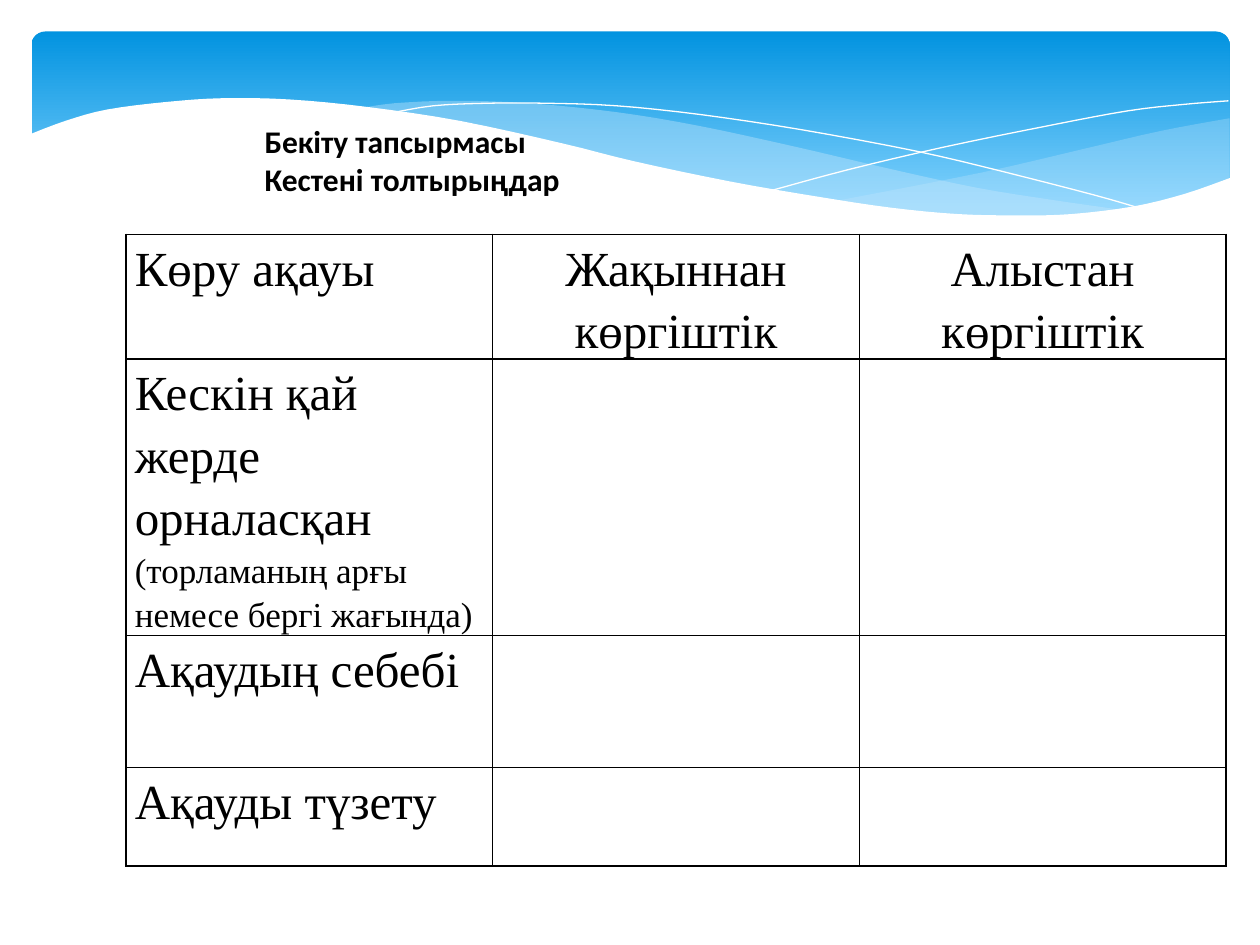
"""Build a task slide with a blue wave banner and a table to fill in about eyesight defects."""
from dataclasses import dataclass
from itertools import chain
from typing import Optional

from lxml.etree import SubElement
from pptx import Presentation
from pptx.dml.color import RGBColor
from pptx.enum.shapes import MSO_SHAPE as Shape
from pptx.enum.text import MSO_ANCHOR as Anchor, MSO_AUTO_SIZE as AutoSize, PP_ALIGN as Align
from pptx.oxml.ns import qn
from pptx.util import Inches, Pt

SLIDE_W, SLIDE_H = Inches(10), Inches(7.5)
GRID_COLUMNS = 100
COLORS = {"ink": "000000", "paper": "FFFFFF", "sky": "0293E0", "pale_sky": "83D3FE", "mist": "C6E7FC"}

Point = tuple[float, float]
Curve = list[Point]


@dataclass
class Wave:
    edges: list[Curve]
    fill: Optional[str] = None
    opacity: int = 100


@dataclass
class Line:
    text: str
    size: int = 28


WAVES = [
    Wave([
        [(97.5, 9.4), (92.1, 10.4), (86.1, 11.8), (77.9, 13.7), (66.1, 16)],
        [(66.1, 16), (71.9, 16.7), (76.9, 17.1), (82.4, 17.2), (87.2, 16.9), (91.3, 16.2),
         (94.9, 15.2), (97.6, 14.1)],
        [(97.6, 14.1), (97.6, 9.4)],
    ], "mist", 29),
    Wave([
        [(89.3, 16.7), (83.7, 15.9), (77.5, 14.9), (70.6, 13.4), (62.9, 11.6), (55.5, 10),
         (48.9, 8.9), (42, 8.2), (36.1, 8), (31.3, 8.2), (28.6, 8.6)],
        [(28.6, 8.6), (34.2, 9.4), (40.4, 10.6), (49.1, 12.6), (56.6, 14.3), (63.4, 15.6),
         (69.5, 16.5), (76.1, 17.1), (81.8, 17.3), (85.7, 17.1), (89.3, 16.7)],
    ], "mist", 40),
    Wave([[(30.9, 9), (34.4, 8.4), (38.7, 8.2), (43.3, 8.2), (48.9, 8.4), (55.6, 9.1), (63.6, 10.3),
           (72.7, 12), (79.5, 13.6), (86.9, 15.5), (90.7, 16.6)]]),
    Wave([[(61.3, 15.1), (67.2, 13.5), (74.8, 11.7), (83.6, 9.9), (89.5, 8.8), (93.8, 8.3), (97.5, 8)]]),
    Wave([
        [(97.7, 14.1), (94, 15.4), (89.9, 16.4), (85, 17), (80.9, 17.1), (76.1, 17), (70.8, 16.5),
         (64.8, 15.6), (57.9, 14.4), (50.3, 12.8), (44.7, 11.4), (36.5, 9.6), (29.2, 8.5),
         (23, 7.9), (17.7, 7.8), (13.2, 8.1), (8.5, 8.7), (5.2, 9.6), (2.3, 10.7)],
        [(2.3, 10.7), (2.3, 22.4)],
        [(2.3, 22.4), (97.7, 22.4)],
        [(97.7, 22.4), (97.7, 14.1)],
    ], "paper"),
]

TASK = ["Бекіту тапсырмасы", "Кестені толтырыңдар"]
DEFECTS = ["Жақыннан көргіштік", "Алыстан көргіштік"]
QUESTIONS = [
    [Line("Көру ақауы")],
    [Line("Кескін қай жерде орналасқан"), Line("(торламаның арғы немесе бергі жағында)", 20)],
    [Line("Ақаудың себебі")],
    [Line("Ақауды түзету")],
]
ROW_HEIGHTS = [7.8, 16.2, 10.5, 7.8]
COLUMN_WIDTH = 29.1


def grid(*lengths: float) -> list[int]:
    """Turn grid steps into EMU."""
    return [round(length * SLIDE_W / GRID_COLUMNS) for length in lengths]


def color(key: str) -> RGBColor:
    """Look up a named colour."""
    return RGBColor.from_string(COLORS[key])


def smooth(knots: Curve, steps: int = 4) -> Curve:
    """Run a Catmull-Rom spline through the knots."""
    if len(knots) < 3:
        return knots
    padded = [knots[0], *knots, knots[-1]]
    points = [knots[0]]
    for a, b, c, d in zip(padded, padded[1:], padded[2:], padded[3:]):
        for step in range(1, steps + 1):
            t = step / steps
            points.append(tuple(
                (2 * q + (r - p) * t + (2 * p - 5 * q + 4 * r - s) * t ** 2
                 + (3 * q - p - 3 * r + s) * t ** 3) / 2
                for p, q, r, s in zip(a, b, c, d)))
    return points


def draw_banner(slide) -> None:
    """Draw the blue gradient panel behind the waves."""
    banner = slide.shapes.add_shape(Shape.ROUNDED_RECTANGLE, *grid(2.5, 2.5, 95.1, 15.6))
    banner.adjustments[0] = 0.07
    banner.shadow.inherit = False
    banner.line.fill.background()
    banner.fill.gradient()
    banner.fill.gradient_angle = 270
    for stop, key, position in zip(banner.fill.gradient_stops, ("sky", "pale_sky"), (0, 0.9)):
        stop.color.rgb = color(key)
        stop.position = position


def draw_wave(slide, wave: Wave) -> None:
    """Draw a filled wave, or a white hairline where it has no fill."""
    start, *rest = [grid(*point) for point in chain.from_iterable(map(smooth, wave.edges))]
    builder = slide.shapes.build_freeform(*start)
    builder.add_line_segments(rest, close=wave.fill is not None)
    shape = builder.convert_to_shape()
    shape.shadow.inherit = False
    if wave.fill is None:
        shape.fill.background()
        shape.line.color.rgb = color("paper")
        shape.line.width = Pt(0)
        return
    shape.line.fill.background()
    shape.fill.solid()
    shape.fill.fore_color.rgb = color(wave.fill)
    if wave.opacity < 100:
        tint = next(shape.element.spPr.iter(qn("a:srgbClr")))
        SubElement(tint, qn("a:alpha"), val=str(wave.opacity * 1000))


def write_title(slide) -> None:
    """Place the task in the title, in front of the waves."""
    title = slide.shapes.title
    title.left, title.top, title.width, title.height = grid(20, 9.2, 71.7, 7.1)
    frame = title.text_frame
    frame.text = "\n".join(TASK)
    frame.word_wrap = True
    frame.auto_size = AutoSize.SHAPE_TO_FIT_TEXT
    frame.vertical_anchor = Anchor.TOP
    for paragraph in frame.paragraphs:
        paragraph.alignment = Align.LEFT
        font = paragraph.font
        font.name, font.size, font.bold = "Calibri", Pt(18), True
        font.color.rgb = color("ink")
    slide.shapes.element.append(title.element)


def style_cell(cell) -> None:
    """Give a cell thin black borders and a white fill."""
    properties = cell._tc.get_or_add_tcPr()
    for side in ("lnL", "lnR", "lnT", "lnB"):
        border = SubElement(properties, qn(f"a:{side}"), w=str(Pt(1)))
        SubElement(SubElement(border, qn("a:solidFill")), qn("a:srgbClr"), val=COLORS["ink"])
    cell.fill.solid()
    cell.fill.fore_color.rgb = color("paper")


def write_cell(cell, lines: list[Line], alignment: Align = Align.LEFT) -> None:
    """Write one paragraph per line into a cell."""
    cell.margin_left = cell.margin_right = Inches(0.07)
    cell.margin_top = cell.margin_bottom = 0
    cell.text = "\n".join(line.text for line in lines)
    for paragraph, line in zip(cell.text_frame.paragraphs, lines):
        paragraph.alignment = alignment
        paragraph.line_spacing = 1.15
        paragraph.font.name, paragraph.font.size = "Times New Roman", Pt(line.size)
        paragraph.font.color.rgb = color("ink")


def draw_table(slide) -> None:
    """Draw the table of questions with empty answer cells."""
    columns = len(DEFECTS) + 1
    table = slide.shapes.add_table(
        len(QUESTIONS), columns, *grid(10, 18.6, COLUMN_WIDTH * columns, sum(ROW_HEIGHTS))).table
    table.first_row = table.horz_banding = False
    for row, height in zip(table.rows, grid(*ROW_HEIGHTS)):
        row.height = height
    for cell in table.iter_cells():
        style_cell(cell)
    for row, lines in enumerate(QUESTIONS):
        write_cell(table.cell(row, 0), lines)
    for column, defect in enumerate(DEFECTS, start=1):
        write_cell(table.cell(0, column), [Line(defect)], Align.CENTER)


def main() -> None:
    """Assemble and save the slide."""
    deck = Presentation()
    deck.slide_width, deck.slide_height = SLIDE_W, SLIDE_H
    slide = deck.slides.add_slide(deck.slide_layouts.get_by_name("Title Only"))
    draw_banner(slide)
    for wave in WAVES:
        draw_wave(slide, wave)
    draw_table(slide)
    write_title(slide)
    deck.save("out.pptx")


if __name__ == "__main__":
    main()
